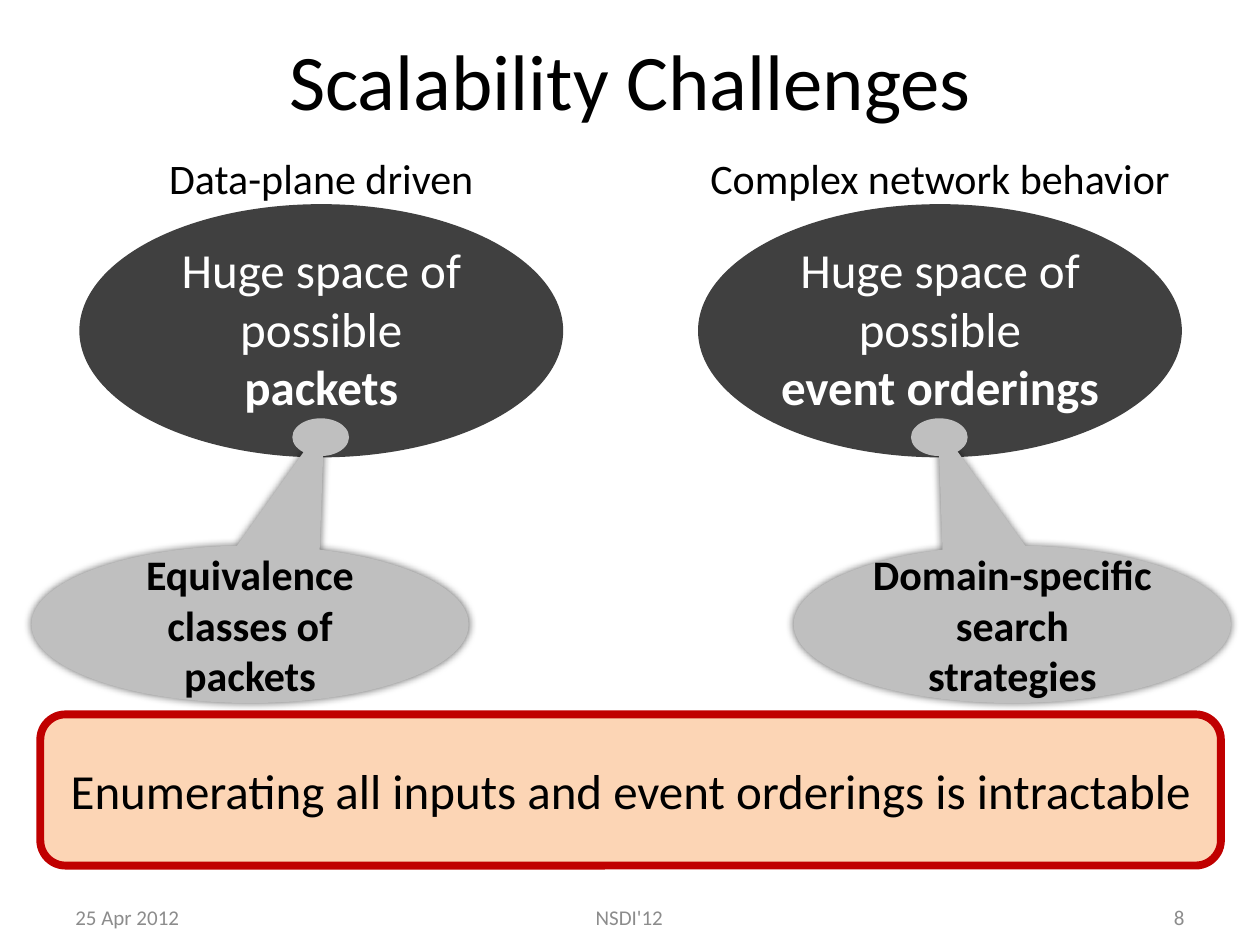
from lxml.etree import SubElement
from pptx import Presentation
from pptx.dml.color import RGBColor
from pptx.enum.shapes import MSO_SHAPE
from pptx.enum.text import MSO_ANCHOR, PP_ALIGN
from pptx.oxml.ns import qn
from pptx.util import Emu, Pt

PIXEL = 9144  # 100 px to the inch
FONT = "Calibri"
BLACK = RGBColor(0x00, 0x00, 0x00)
WHITE = RGBColor(0xFF, 0xFF, 0xFF)
DARK_GRAY = RGBColor(0x40, 0x40, 0x40)
LIGHT_GRAY = RGBColor(0xBF, 0xBF, 0xBF)
FOOTER_GRAY = RGBColor(0x8C, 0x8C, 0x8C)
PEACH = RGBColor(0xFC, 0xD5, 0xB5)
RED = RGBColor(0xC0, 0x00, 0x00)


def px(*lengths):
    return [Emu(length * PIXEL) for length in lengths]


def write(shape, text, size, color=BLACK, align=PP_ALIGN.CENTER,
          anchor=MSO_ANCHOR.MIDDLE, bold=False, wrap=True):
    text_frame = shape.text_frame
    text_frame.word_wrap = wrap
    text_frame.vertical_anchor = anchor
    paragraph = text_frame.paragraphs[0]
    paragraph.text = text
    paragraph.alignment = align
    for run in paragraph.runs:
        run.font.name = FONT
        run.font.size = Pt(size)
        run.font.bold = bold
        run.font.color.rgb = color
    return paragraph


def add_text(slide, box, text, size, **style):
    return write(slide.shapes.add_textbox(*px(*box)), text, size, **style)


def add_filled(slide, kind, box, fill):
    shape = slide.shapes.add_shape(kind, *px(*box))
    shape.shadow.inherit = False
    shape.fill.solid()
    shape.fill.fore_color.rgb = fill
    shape.line.fill.background()
    return shape


def add_glow_shadow(shape):
    effects = shape._element.spPr.find(qn("a:effectLst"))
    shadow = SubElement(effects, qn("a:outerShdw"), blurRad=str(Pt(5)),
                        dist="0", dir="0", algn="ctr", rotWithShape="0")
    color = SubElement(shadow, qn("a:srgbClr"), val="000000")
    SubElement(color, qn("a:alpha"), val="60000")


def add_challenge(slide, box, label, space, remedy, remedy_offset, tip):
    left, top, width, height = box
    # Heading, a little wider than the dark oval below it
    add_text(slide, (left - 20, top, width + 40, 50), label, 24,
             anchor=MSO_ANCHOR.TOP, wrap=False)
    add_filled(slide, MSO_SHAPE.OVAL, (left, top + 46, width, 201), DARK_GRAY)
    paragraph = add_text(slide, (left, top + 69, width, 178),
                         f"Huge space of\npossible\n{space}", 28, color=WHITE,
                         anchor=MSO_ANCHOR.TOP, wrap=False)
    paragraph.runs[-1].font.bold = True

    # Callout with the remedy, pointing at the small oval
    callout = add_filled(slide, MSO_SHAPE.OVAL_CALLOUT,
                         (left + remedy_offset, top + height - 125, 347, 125),
                         LIGHT_GRAY)
    callout.adjustments[0], callout.adjustments[1] = tip
    add_glow_shadow(callout)
    write(callout, remedy, 24, bold=True)
    add_filled(slide, MSO_SHAPE.OVAL,
               (left + (width - 45) // 2, top + 216, 45, 30), LIGHT_GRAY)


def add_conclusion(slide, box, text):
    banner = add_filled(slide, MSO_SHAPE.ROUNDED_RECTANGLE, box, PEACH)
    banner.line.color.rgb = RED
    banner.line.width = Pt(4.5)
    write(banner, text, 28, wrap=False)


def add_footer(slide, box, date, event, number):
    left, top, width, height = box
    side, middle = 233, 317
    parts = (
        (left, side, date, PP_ALIGN.LEFT),
        (left + (width - middle) // 2, middle, event, PP_ALIGN.CENTER),
        (left + width - side, side, number, PP_ALIGN.RIGHT),
    )
    for part_left, part_width, text, align in parts:
        add_text(slide, (part_left, top, part_width, height), text, 12,
                 color=FOOTER_GRAY, align=align)


def main():
    presentation = Presentation()
    presentation.slide_width, presentation.slide_height = px(1000, 750)
    slide = presentation.slides.add_slide(presentation.slide_layouts[6])

    add_text(slide, (50, 0, 900, 125), "Scalability Challenges", 45)
    add_challenge(slide, (63, 116, 384, 442), "Data-plane driven", "packets",
                  "Equivalence\nclasses of\npackets", -38, (0.17, -1.28))
    add_challenge(slide, (554, 116, 384, 442), "Complex network behavior",
                  "event orderings", "Domain-specific search strategies",
                  76, (-0.17, -1.27))
    add_conclusion(slide, (32, 567, 937, 120),
                   "Enumerating all inputs and event orderings is intractable")
    add_footer(slide, (50, 708, 900, 40), "25 Apr 2012", "NSDI'12", "8")

    presentation.save("out.pptx")


if __name__ == "__main__":
    main()
